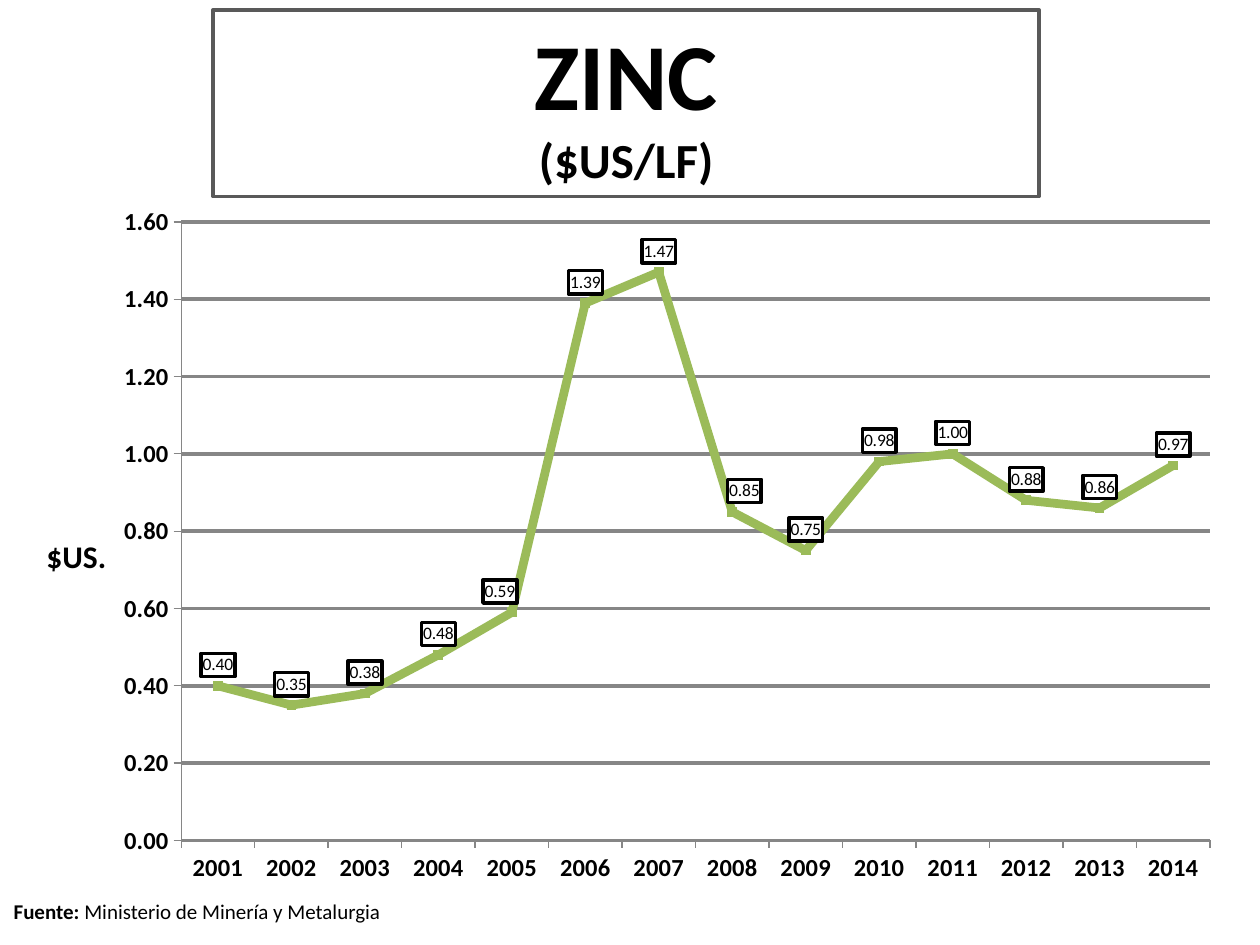
from typing import NamedTuple
import copy

from lxml import etree
from pptx import Presentation
from pptx.chart.data import CategoryChartData
from pptx.dml.color import RGBColor
from pptx.enum.chart import XL_CHART_TYPE, XL_LABEL_POSITION, XL_MARKER_STYLE, XL_TICK_MARK
from pptx.enum.text import MSO_ANCHOR, MSO_AUTO_SIZE, PP_ALIGN
from pptx.oxml.ns import qn
from pptx.util import Cm, Pt

LINE_MARKERS = XL_CHART_TYPE.LINE_MARKERS
LABEL_ABOVE = XL_LABEL_POSITION.ABOVE
SQUARE = XL_MARKER_STYLE.SQUARE
TICK_OUTSIDE = XL_TICK_MARK.OUTSIDE
TICK_NONE = XL_TICK_MARK.NONE
CENTER = PP_ALIGN.CENTER
TOP, MIDDLE = MSO_ANCHOR.TOP, MSO_ANCHOR.MIDDLE
FIT_SHAPE = MSO_AUTO_SIZE.SHAPE_TO_FIT_TEXT

FONT = "Calibri"
NUMBER_FORMAT = "0.00"
COLORS = {
    "text": "000000",
    "background": "FFFFFF",
    "frame": "595959",
    "grid": "868686",
    "zinc": "9BBB59",
}
FIRST_YEAR = 2001
PRICES = [0.40, 0.35, 0.38, 0.48, 0.59, 1.39, 1.47, 0.85, 0.75, 0.98, 1.00, 0.88, 0.86, 0.97]
LABEL_SHIFTS = {4: -0.01, 7: 0.01}  # point index: share of the chart width


class Box(NamedTuple):
    left: float
    top: float
    width: float
    height: float

    def lengths(self) -> list:
        return [Cm(value) for value in self]


TITLE_BOX = Box(4.29, 0.2, 16.66, 3.76)
SOURCE_BOX = Box(0, 17.78, 7.95, 1.19)
CHART_BOX = Box(0.58, 4.17, 24.2, 14.1)


def color(name: str) -> RGBColor:
    return RGBColor.from_string(COLORS[name])


def format_font(font, size: float, bold: bool = False) -> None:
    font.name = FONT
    font.size = Pt(size)
    font.bold = bold
    font.color.rgb = color("text")


def add_run(paragraph, text: str, size: float, bold: bool = False) -> None:
    paragraph.alignment = CENTER
    run = paragraph.add_run()
    run.text = text
    format_font(run.font, size, bold)


def format_line(line, name: str, width: float) -> None:
    line.color.rgb = color(name)
    line.width = Pt(width)


def fill_solid(fill, name: str) -> None:
    fill.solid()
    fill.fore_color.rgb = color(name)


def manual_layout(**settings) -> etree.Element:
    """Return a c:layout whose manual settings are given in schema order."""
    layout = etree.Element(qn("c:layout"))
    manual = etree.SubElement(layout, qn("c:manualLayout"))
    for tag, value in settings.items():
        etree.SubElement(manual, qn(f"c:{tag}")).set("val", str(value))
    return layout


def replace_layout(parent, index: int, layout) -> None:
    for old in parent.findall(qn("c:layout")):
        parent.remove(old)
    parent.insert(index, layout)


def add_title(slide) -> None:
    title = slide.shapes.title
    title.left, title.top, title.width, title.height = TITLE_BOX.lengths()
    fill_solid(title.fill, "background")
    format_line(title.line, "frame", 2)
    frame = title.text_frame
    frame.word_wrap = True
    frame.auto_size = FIT_SHAPE
    frame.vertical_anchor = TOP
    add_run(frame.paragraphs[0], "ZINC", 54, True)
    add_run(frame.add_paragraph(), "($US/LF)", 28, True)


def add_source(slide) -> None:
    box = slide.shapes.add_textbox(*SOURCE_BOX.lengths())
    fill_solid(box.fill, "background")
    frame = box.text_frame
    frame.word_wrap = True
    frame.vertical_anchor = MIDDLE
    paragraph = frame.paragraphs[0]
    add_run(paragraph, "Fuente: ", 12, True)
    add_run(paragraph, "Ministerio de Minería y Metalurgia", 12)


def format_axes(chart) -> None:
    for axis in (chart.category_axis, chart.value_axis):
        axis.major_tick_mark = TICK_OUTSIDE
        axis.minor_tick_mark = TICK_NONE
        format_line(axis.format.line, "grid", 0.75)
        format_font(axis.tick_labels.font, 14, True)
    axis = chart.value_axis
    axis.minimum_scale, axis.maximum_scale, axis.major_unit = 0, 1.6, 0.2
    axis.tick_labels.number_format = NUMBER_FORMAT
    axis.tick_labels.number_format_is_linked = False
    axis.has_major_gridlines = True
    format_line(axis.major_gridlines.format.line, "grid", 2)

    axis_title = axis.axis_title
    add_run(axis_title.text_frame.paragraphs[0], "$US.", 18, True)
    element = axis_title._element
    body = element.find(".//" + qn("a:bodyPr"))
    body.set("rot", "0")
    body.set("vert", "horz")
    replace_layout(element, 1, manual_layout(xMode="edge", yMode="edge", x=0.01, y=0.46))


def add_labels(series) -> None:
    labels = series.data_labels
    labels.show_value = True
    labels.position = LABEL_ABOVE
    labels.number_format = NUMBER_FORMAT
    labels.number_format_is_linked = False
    format_font(labels.font, 10)

    element = labels._element
    frame = copy.deepcopy(series._element.find(qn("c:spPr")))
    for child in list(frame):
        frame.remove(child)
    for parent, name in ((frame, "background"),
                         (etree.SubElement(frame, qn("a:ln"), w=str(Pt(2))), "text")):
        fill = etree.Element(qn("a:solidFill"))
        etree.SubElement(fill, qn("a:srgbClr"), val=COLORS[name])
        parent.insert(0, fill)
    element.find(qn("c:numFmt")).addnext(frame)

    shared = [child for child in element if child.tag != qn("c:showLeaderLines")]
    for position, (point, shift) in enumerate(LABEL_SHIFTS.items()):
        label = etree.Element(qn("c:dLbl"))
        etree.SubElement(label, qn("c:idx")).set("val", str(point))
        label.append(manual_layout(x=shift, y=0))
        label.extend(copy.deepcopy(child) for child in shared)
        element.insert(position, label)


def add_price_chart(slide) -> None:
    data = CategoryChartData(number_format=NUMBER_FORMAT)
    data.categories = [str(FIRST_YEAR + offset) for offset in range(len(PRICES))]
    data.add_series("Zinc", PRICES)
    chart = slide.shapes.add_chart(LINE_MARKERS, *CHART_BOX.lengths(), data).chart
    chart.has_title = False
    chart.has_legend = False
    format_font(chart.font, 10)
    format_axes(chart)

    plot = chart.plots[0]
    plot.vary_by_categories = False
    series = plot.series[0]
    series.smooth = False
    format_line(series.format.line, "zinc", 5)
    series.marker.style = SQUARE
    series.marker.size = 5
    fill_solid(series.marker.format.fill, "zinc")
    format_line(series.marker.format.line, "zinc", 0.75)
    add_labels(series)

    plot_area = chart._chartSpace.find(".//" + qn("c:plotArea"))
    replace_layout(plot_area, 0, manual_layout(
        layoutTarget="inner", xMode="edge", yMode="edge", x=0.127, y=0.021, w=0.857, h=0.885))


def main() -> None:
    presentation = Presentation()
    presentation.slide_width, presentation.slide_height = Cm(25.4), Cm(19.05)
    slide = presentation.slides.add_slide(presentation.slide_layouts[5])
    add_title(slide)
    add_source(slide)
    add_price_chart(slide)
    presentation.save("out.pptx")


if __name__ == "__main__":
    main()
